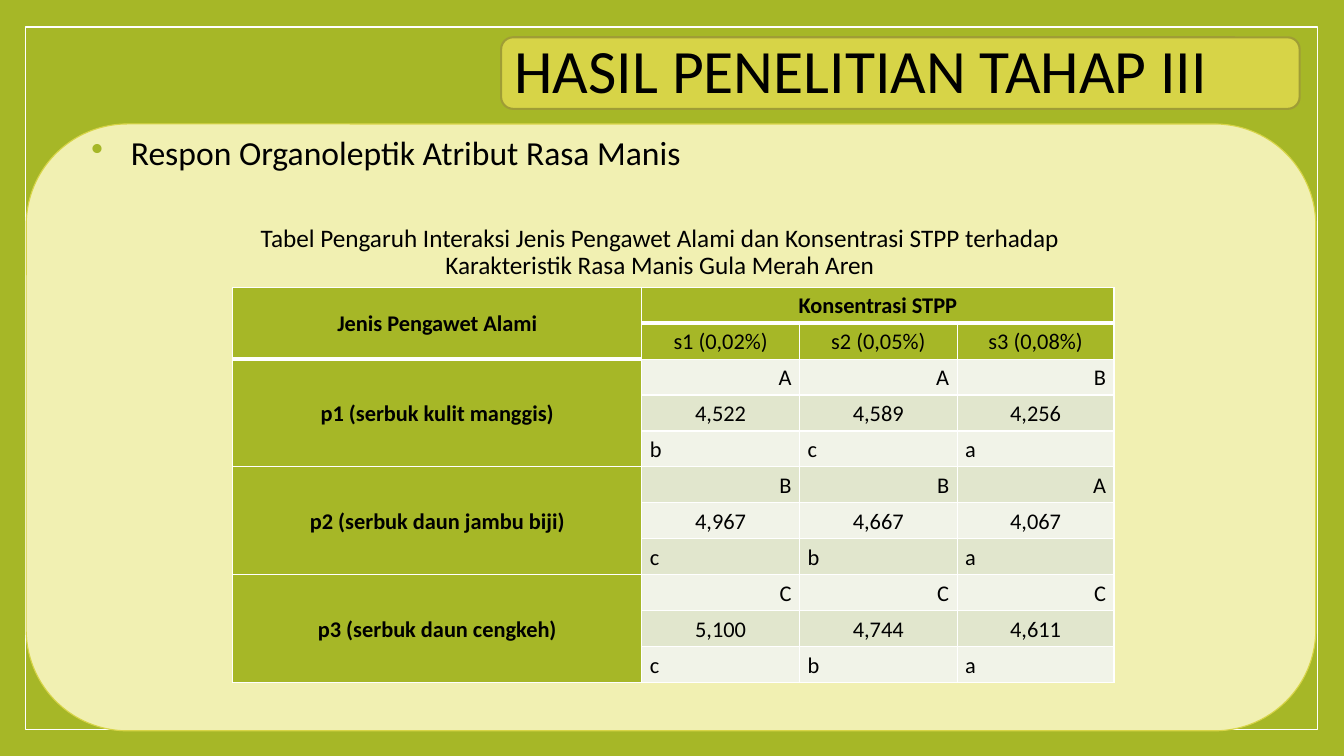
from lxml.etree import SubElement
from pptx import Presentation
from pptx.dml.color import RGBColor
from pptx.enum.shapes import MSO_SHAPE as Preset
from pptx.enum.text import MSO_ANCHOR as Anchor, PP_ALIGN as Align
from pptx.oxml.ns import qn
from pptx.util import Inches, Pt

GREEN, CREAM, YELLOW, OLIVE = "A6B727", "F1F0B2", "D7D447", "9F9D35"
WHITE, BLACK = "FFFFFF", "000000"
BANDS = ("F1F3E8", "E1E6CD")

CONCENTRATIONS = ("s1 (0,02%)", "s2 (0,05%)", "s3 (0,08%)")
PRESERVATIVES = (
    ("p1 (serbuk kulit manggis)", ("A", "A", "B"), ("4,522", "4,589", "4,256"), ("b", "c", "a")),
    ("p2 (serbuk daun jambu biji)", ("B", "B", "A"), ("4,967", "4,667", "4,067"), ("c", "b", "a")),
    ("p3 (serbuk daun cengkeh)", ("C", "C", "C"), ("5,100", "4,744", "4,611"), ("c", "b", "a")),
)
LINE_ALIGNS = (Align.RIGHT, Align.CENTER, Align.LEFT)
HEADER_ROWS = 2
ROW_COUNT = HEADER_ROWS + len(PRESERVATIVES) * len(LINE_ALIGNS)
COLUMN_SHARES = (0.464, 0.179, 0.179, 0.178)


def color(hex_text):
    return RGBColor.from_string(hex_text)


def place(box):
    return [Inches(length) for length in box]


def write(frame, text, size, align, spacing=0.9, before=0, bold=False):
    frame.word_wrap = True
    paragraph = frame.paragraphs[0]
    paragraph.alignment = align
    paragraph.line_spacing = spacing
    paragraph.space_before = Pt(before)
    run = paragraph.add_run()
    run.text = text
    run.font.name = "Calibri"
    run.font.size = Pt(size)
    run.font.bold = bold
    run.font.color.rgb = color(BLACK)
    return paragraph


def add_panel(slide, preset, box, fill, line, width):
    shape = slide.shapes.add_shape(preset, *place(box))
    shape.shadow.inherit = False
    shape.fill.solid()
    shape.fill.fore_color.rgb = color(fill)
    shape.line.color.rgb = color(line)
    shape.line.width = Pt(width)
    return shape


def add_title(slide, box, text):
    banner = add_panel(slide, Preset.ROUNDED_RECTANGLE, box, YELLOW, OLIVE, 1.5)
    banner.text_frame.vertical_anchor = Anchor.MIDDLE
    write(banner.text_frame, text, 44, Align.JUSTIFY)


def add_text(slide, box, text, size, align):
    text_box = slide.shapes.add_textbox(*place(box))
    return write(text_box.text_frame, text, size, align, before=14)


def add_bullet(paragraph, indent):
    properties = paragraph._p.get_or_add_pPr()
    properties.set("marL", str(Inches(indent)))
    properties.set("indent", str(-Inches(indent)))
    bullet_color = SubElement(properties, qn("a:buClr"))
    SubElement(bullet_color, qn("a:srgbClr"), val=GREEN)
    SubElement(properties, qn("a:buSzPct"), val="80000")
    SubElement(properties, qn("a:buFont"), typeface="Wingdings 2")
    SubElement(properties, qn("a:buChar"), char="▪")


def is_thick_below(row, column):
    return row == (1 if column == 0 else 0)


def style_cell(cell, row, column, fill):
    properties = cell._tc.get_or_add_tcPr()
    top = 3 if is_thick_below(row - 1, column) else 1
    bottom = 3 if is_thick_below(row, column) else 1
    for edge, width in (("lnL", 1), ("lnR", 1), ("lnT", top), ("lnB", bottom)):
        border = SubElement(properties, qn(f"a:{edge}"), w=str(Pt(width)))
        solid = SubElement(border, qn("a:solidFill"))
        SubElement(solid, qn("a:srgbClr"), val=WHITE)
    cell.fill.solid()
    cell.fill.fore_color.rgb = color(fill)
    cell.vertical_anchor = Anchor.MIDDLE
    cell.margin_left = cell.margin_right = Inches(0.08)
    cell.margin_top = cell.margin_bottom = 0


def add_results_table(slide, box):
    frame = slide.shapes.add_table(ROW_COUNT, len(COLUMN_SHARES), *place(box))
    table = frame.table
    for column, share in zip(table.columns, COLUMN_SHARES):
        column.width = Inches(box[2] * share)
    for row in table.rows:
        row.height = Inches(box[3] / ROW_COUNT)
    for row in range(ROW_COUNT):
        for column in range(len(COLUMN_SHARES)):
            is_header = row < HEADER_ROWS or column == 0
            style_cell(table.cell(row, column), row, column, GREEN if is_header else BANDS[row % 2])

    def fill_cell(row, column, text, align=Align.CENTER, bold=False):
        write(table.cell(row, column).text_frame, text, 16, align, 1.07, bold=bold)

    table.cell(0, 0).merge(table.cell(1, 0))
    table.cell(0, 1).merge(table.cell(0, 3))
    fill_cell(0, 0, "Jenis Pengawet Alami", bold=True)
    fill_cell(0, 1, "Konsentrasi STPP", bold=True)
    for column, concentration in enumerate(CONCENTRATIONS, 1):
        fill_cell(1, column, concentration)
    for group, (name, *lines) in enumerate(PRESERVATIVES):
        first = HEADER_ROWS + group * len(lines)
        table.cell(first, 0).merge(table.cell(first + len(lines) - 1, 0))
        fill_cell(first, 0, name, bold=True)
        for row, (line, align) in enumerate(zip(lines, LINE_ALIGNS), first):
            for column, text in enumerate(line, 1):
                fill_cell(row, column, text, align)


def add_results_slide(presentation):
    slide = presentation.slides.add_slide(presentation.slide_layouts[6])
    slide.background.fill.solid()
    slide.background.fill.fore_color.rgb = color(GREEN)
    add_panel(slide, Preset.RECTANGLE, (0.25, 0.27, 12.82, 6.97), GREEN, WHITE, 1)
    add_panel(slide, Preset.ROUNDED_RECTANGLE, (0.26, 1.23, 12.79, 6.02), CREAM, YELLOW, 0.79)
    add_title(slide, (4.97, 0.37, 7.92, 0.71), "HASIL PENELITIAN TAHAP III")
    heading = add_text(slide, (0.82, 1.3, 6.31, 0.41),
                       "Respon Organoleptik Atribut Rasa Manis", 24, Align.LEFT)
    add_bullet(heading, 0.38)
    add_text(slide, (2.31, 2.19, 8.47, 0.73),
             "Tabel Pengaruh Interaksi Jenis Pengawet Alami dan Konsentrasi STPP terhadap "
             "Karakteristik Rasa Manis Gula Merah Aren", 18, Align.CENTER)
    add_results_table(slide, (2.31, 2.85, 8.74, 3.92))


def main():
    presentation = Presentation()
    presentation.slide_width = Inches(13.33)
    presentation.slide_height = Inches(7.5)
    add_results_slide(presentation)
    presentation.save("out.pptx")


if __name__ == "__main__":
    main()
